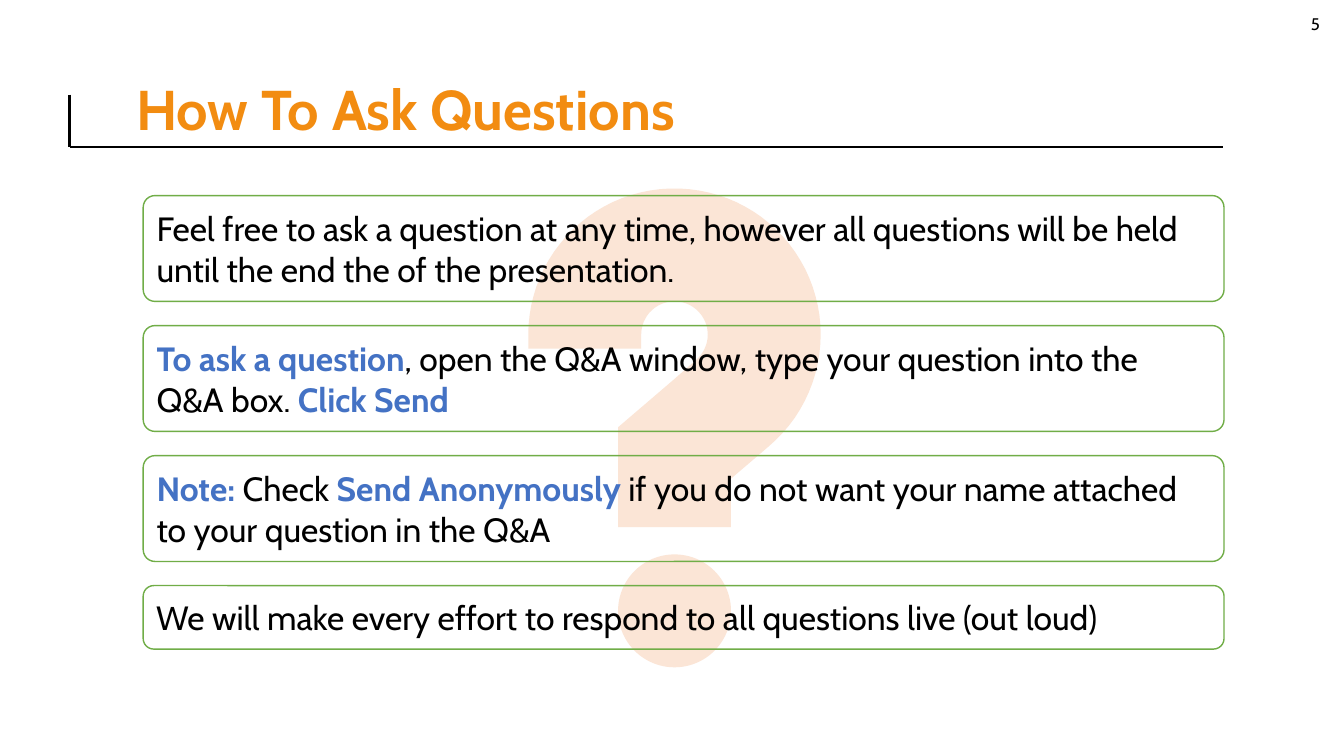
import math

import pptx
import pptx.dml.color
import pptx.enum.shapes
import pptx.enum.text
import pptx.oxml
import pptx.util
from pptx.util import Inches

FONT = "Cabin"
COLORS = {
    "title": "F28C11",
    "text": "000000",
    "accent": "4472C4",
    "card": "70AD47",
    "question_mark": "FBE5D6",
}
CARDS = [
    (1.05, 0.111, [
        ("Feel free to ask a question at any time, however all questions will be held "
         "until the end the of the presentation.", False),
    ]),
    (1.05, 0.111, [
        ("To ask a question", True),
        (", open the Q&A window, type your question into the \nQ&A box. ", False),
        ("Click Send", True),
    ]),
    (1.05, 0.111, [
        ("Note: ", True),
        ("Check ", False),
        ("Send Anonymously ", True),
        ("if you do not want your name attached \nto your question in the Q&A", False),
    ]),
    (0.63, 0.166, [
        ("We will make every effort to respond to all questions live (out loud)", False),
    ]),
]


def rgb(name):
    """Return the palette colour with this name."""
    return pptx.dml.color.RGBColor.from_string(COLORS[name])


def add_run(paragraph, text, size, color, bold=False):
    """Add formatted text, breaking the line at each newline."""
    for index, line in enumerate(text.split("\n")):
        if index:
            paragraph.add_line_break()
        run = paragraph.add_run()
        run.text = line
        run.font.name = FONT
        run.font.size = pptx.util.Pt(size)
        run.font.bold = bold
        run.font.color.rgb = rgb(color)


def add_rule(slide, x1, y1, x2, y2):
    """Draw a black heading rule between two points."""
    rule = slide.shapes.add_connector(
        pptx.enum.shapes.MSO_CONNECTOR.STRAIGHT,
        Inches(x1), Inches(y1), Inches(x2), Inches(y2))
    rule.line.color.rgb = rgb("text")
    rule.line.width = pptx.util.Pt(1.5)
    rule._element.spPr.append(pptx.oxml.parse_xml(
        '<a:effectLst xmlns:a="http://schemas.openxmlformats.org/drawingml/2006/main"/>'))


def add_heading(slide, left, top, width, height):
    """Place the title above an L-shaped rule."""
    right, bottom = left + width, top + height
    add_rule(slide, left, bottom - 0.52, left, bottom)
    add_rule(slide, left, bottom, right, bottom)
    title = slide.shapes.title
    title.left, title.top = Inches(left + 0.56), Inches(top)
    title.width, title.height = Inches(width - 0.56), Inches(height)
    frame = title.text_frame
    frame.vertical_anchor = pptx.enum.text.MSO_ANCHOR.BOTTOM
    paragraph = frame.paragraphs[0]
    paragraph.alignment = pptx.enum.text.PP_ALIGN.LEFT
    paragraph.line_spacing = 0.9
    add_run(paragraph, "How To Ask Questions", 40, "title", True)


def add_page_number(slide, left, top, width, height):
    """Place the page number at the right of its box."""
    number = slide.shapes.add_textbox(
        Inches(left), Inches(top), Inches(width), Inches(height))
    frame = number.text_frame
    frame.word_wrap = True
    frame.vertical_anchor = pptx.enum.text.MSO_ANCHOR.MIDDLE
    frame.paragraphs[0].alignment = pptx.enum.text.PP_ALIGN.RIGHT
    add_run(frame.paragraphs[0], "5", 12, "text")


def arc(x, y, radius, start, end):
    """Return points along an arc, in degrees clockwise from the right."""
    steps = 60
    angles = [math.radians(start + (end - start) * i / steps) for i in range(steps + 1)]
    return [(x + radius * math.cos(a), y + radius * math.sin(a)) for a in angles]


def add_question_mark(slide, left, top, width, height):
    """Draw a pale question mark from a hook and a dot."""
    radius, hole, half_stem = width / 2, 0.33, 0.56
    x, y = left + radius, top + radius
    points = arc(x, y, radius, 180, 410)
    points += [(x + half_stem, y + 1.43), (x + half_stem, y + 1.91),
               (x - half_stem, y + 1.91), (x - half_stem, y + 0.92), (x, y + 0.44)]
    points += arc(x, y, hole, 410, 180)
    points += [(x - hole, y + 0.14), (left, y + 0.14)]
    units = 1000
    outline = [(round(px * units), round(py * units)) for px, py in points]
    builder = slide.shapes.build_freeform(*outline[0], scale=Inches(1) / units)
    builder.add_line_segments(outline[1:], close=True)
    hook = builder.convert_to_shape()
    diameter = 2 * half_stem
    dot = slide.shapes.add_shape(
        pptx.enum.shapes.MSO_SHAPE.OVAL, Inches(x - half_stem),
        Inches(top + height - diameter), Inches(diameter), Inches(diameter))
    for part in (hook, dot):
        part.shadow.inherit = False
        part.fill.solid()
        part.fill.fore_color.rgb = rgb("question_mark")
        part.line.fill.background()


def add_card(slide, left, top, width, height, corner, runs):
    """Draw one outlined card with its text."""
    card = slide.shapes.add_shape(
        pptx.enum.shapes.MSO_SHAPE.ROUNDED_RECTANGLE,
        Inches(left), Inches(top), Inches(width), Inches(height))
    card.adjustments[0] = corner
    card.shadow.inherit = False
    card.fill.background()
    card.line.color.rgb = rgb("card")
    card.line.width = pptx.util.Pt(1)
    frame = card.text_frame
    frame.word_wrap = True
    frame.vertical_anchor = pptx.enum.text.MSO_ANCHOR.MIDDLE
    frame.margin_left, frame.margin_right = Inches(0.1), Inches(0.12)
    frame.margin_top = frame.margin_bottom = Inches(0.02)
    paragraph = frame.paragraphs[0]
    paragraph.alignment = pptx.enum.text.PP_ALIGN.LEFT
    for text, emphasised in runs:
        add_run(paragraph, text, 24, "accent" if emphasised else "text", emphasised)


def add_cards(slide, left, top, width, gap):
    """Stack the cards downwards with equal gaps."""
    for height, corner, runs in CARDS:
        add_card(slide, left, top, width, height, corner, runs)
        top += height + gap


def main():
    """Build and save the slide."""
    deck = pptx.Presentation()
    deck.slide_width, deck.slide_height = Inches(13.33), Inches(7.5)
    slide = deck.slides.add_slide(deck.slide_layouts[5])
    add_question_mark(slide, 5.24, 1.87, 2.9, 4.75)
    add_heading(slide, 0.69, 0.09, 11.44, 1.37)
    add_page_number(slide, 10.19, 0.04, 3, 0.4)
    add_cards(slide, 1.42, 1.94, 10.72, 0.24)
    deck.save("out.pptx")


if __name__ == "__main__":
    main()
